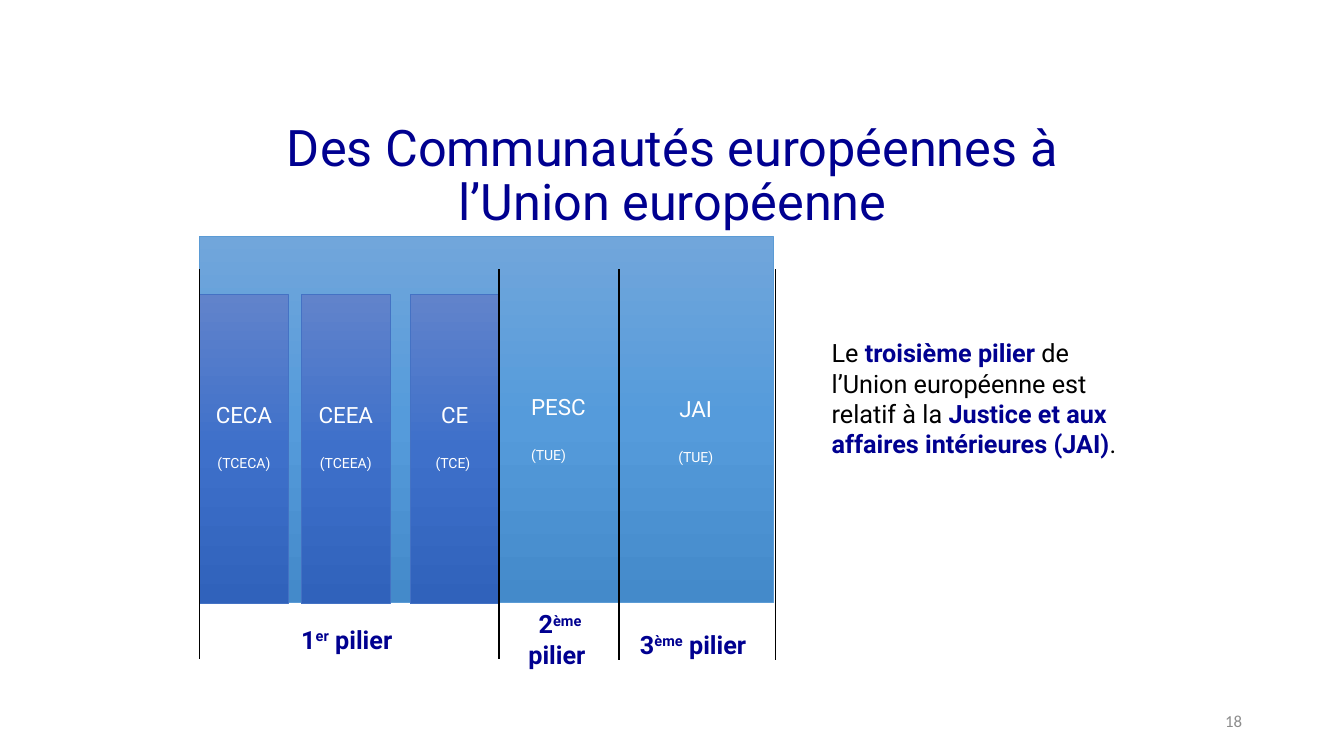
from copy import deepcopy

from lxml.etree import SubElement
from pptx import Presentation
from pptx.dml.color import RGBColor
from pptx.enum.shapes import MSO_CONNECTOR, MSO_SHAPE
from pptx.enum.text import MSO_ANCHOR, MSO_AUTO_SIZE, PP_ALIGN
from pptx.oxml.ns import qn
from pptx.util import Inches, Pt

WIDTH, HEIGHT = Inches(13.33), Inches(7.5)
NAVY, WHITE, BLACK, GREY = "000090", "FFFFFF", "000000", "8C8C8C"
UNION_BLUES = ("71A6DB", "559BDB", "448ACA")
COMMUNITY_BLUES = ("6183CB", "3E70CA", "3062BB")
LEFT_EDGE = 14.85
LINE_GAP = 18.75


def colour(hex_value):
    return RGBColor.from_string(hex_value)


def across(share):
    return round(WIDTH * share / 100)


def down(share):
    return round(HEIGHT * share / 100)


def area(left, top, width, height):
    return across(left), down(top), across(width), down(height)


def write(para, text, size=18, ink=NAVY, bold=False, font="Roboto", raised=False):
    span = para.add_run()
    span.text = text
    span.font.name = font
    span.font.size = Pt(size)
    span.font.bold = bold
    span.font.color.rgb = colour(ink)
    if raised:
        span._r.get_or_add_rPr().set("baseline", "30000")


def add_text(page, place, align=PP_ALIGN.LEFT, wrap=True, grow=True):
    box = page.shapes.add_textbox(*area(*place))
    frame = box.text_frame
    frame.word_wrap = wrap
    frame.auto_size = MSO_AUTO_SIZE.SHAPE_TO_FIT_TEXT if grow else MSO_AUTO_SIZE.NONE
    frame.paragraphs[0].alignment = align
    return frame


def add_block(page, place, blues, edge):
    block = page.shapes.add_shape(MSO_SHAPE.RECTANGLE, *area(*place))
    block.shadow.inherit = False
    block.fill.gradient()
    block.fill.gradient_angle = 270
    first, last = block.fill._fill._gradFill.gsLst
    first.addnext(deepcopy(first))
    for stop, blue, position in zip(block.fill.gradient_stops, blues, (0, 0.5, 1)):
        stop.color.rgb = colour(blue)
        stop.position = position
    block.line.color.rgb = colour(edge)
    block.line.width = Pt(0.5)
    return block.text_frame


def write_entity(frame, name, treaty, align):
    heading, note = frame.paragraphs[0], frame.add_paragraph()
    heading.alignment = note.alignment = align
    heading.space_after = Pt(LINE_GAP)
    write(heading, name, size=16, ink=WHITE)
    write(note, treaty, size=10, ink=WHITE)


def add_community(page, left, name, treaty):
    frame = add_block(page, (left, 38.93, 6.6, 40.93), COMMUNITY_BLUES, "4472C4")
    frame.vertical_anchor = MSO_ANCHOR.MIDDLE
    frame.word_wrap = True
    frame.margin_bottom = Inches(0.05) + Pt(LINE_GAP)
    write_entity(frame, name, treaty, PP_ALIGN.CENTER)


def add_pillar(page, place, number, ending):
    para = add_text(page, place, PP_ALIGN.CENTER).paragraphs[0]
    write(para, number, bold=True)
    write(para, ending, bold=True, raised=True)
    write(para, " pilier ", bold=True)


def add_divider(page, x, bottom):
    divider = page.shapes.add_connector(
        MSO_CONNECTOR.STRAIGHT, across(x), down(35.6), across(x), down(bottom)
    )
    divider.line.color.rgb = colour(BLACK)
    divider.line.width = Pt(1)
    SubElement(divider._element.spPr, qn("a:effectLst"))


def add_title(page, text):
    title = page.shapes.title
    title.left, title.top, title.width, title.height = area(18.15, 9.87, 63.77, 21.47)
    frame = title.text_frame
    frame.word_wrap = True
    frame.auto_size = MSO_AUTO_SIZE.NONE
    frame.vertical_anchor = MSO_ANCHOR.BOTTOM
    para = frame.paragraphs[0]
    para.alignment = PP_ALIGN.CENTER
    para.line_spacing = 0.9
    write(para, text, size=36)


def add_explanation(page):
    para = add_text(page, (61.14, 44, 23.26, 21.6)).paragraphs[0]
    for text, strong in (
        ("Le ", False),
        ("troisième pilier ", True),
        ("de l’Union européenne est relatif à la ", False),
        ("Justice et aux affaires intérieures (JAI)", True),
        (".", False),
    ):
        write(para, text, ink=NAVY if strong else BLACK, bold=strong)


def add_page_number(page, number):
    frame = add_text(page, (70.67, 92.67, 22.5, 5.33), PP_ALIGN.RIGHT, grow=False)
    frame.vertical_anchor = MSO_ANCHOR.MIDDLE
    write(frame.paragraphs[0], number, size=12, ink=GREY, font="Calibri")


def main():
    deck = Presentation()
    deck.slide_width, deck.slide_height = WIDTH, HEIGHT
    page = deck.slides.add_slide(deck.slide_layouts[5])
    add_title(page, "Des Communautés européennes à l’Union européenne")
    add_block(page, (LEFT_EDGE, 31.2, 42.69, 48.53), UNION_BLUES, "5B9BD5")
    for left, name, treaty in (
        (LEFT_EDGE, "CECA", "(TCECA)"),
        (22.43, "CEEA", "(TCEEA)"),
        (30.53, "CE", "(TCE) "),
    ):
        add_community(page, left, name, treaty)
    for place, name, align in (
        ((38.78, 51.33, 6.15, 10.8), "PESC", PP_ALIGN.LEFT),
        ((49.59, 51.6, 4.35, 10.8), "JAI", PP_ALIGN.CENTER),
    ):
        write_entity(add_text(page, place, wrap=False), name, "(TUE)", align)
    for place, number, ending in (
        ((LEFT_EDGE, 81.87, 22.36, 5.33), "1", "er"),
        ((37.36, 79.87, 8.63, 9.47), "2", "ème"),
        ((46.06, 82.53, 11.48, 5.33), "3", "ème"),
    ):
        add_pillar(page, place, number, ending)
    for x, bottom in ((LEFT_EDGE, 87.2), (37.13, 87.2), (46.06, 87.33), (57.69, 87.33)):
        add_divider(page, x, bottom)
    add_explanation(page)
    add_page_number(page, "18")
    deck.save("out.pptx")


if __name__ == "__main__":
    main()
